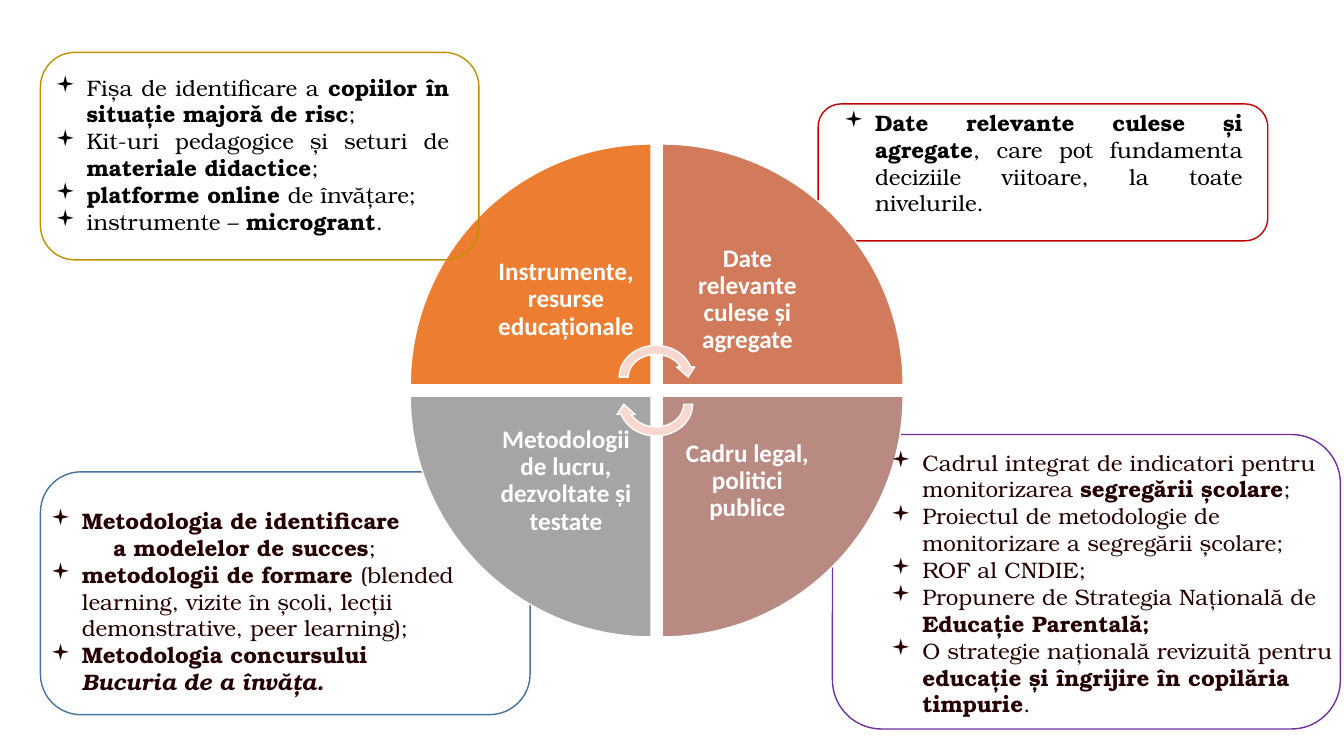
from lxml.etree import SubElement
from pptx import Presentation
from pptx.dml.color import RGBColor
from pptx.enum.shapes import MSO_SHAPE
from pptx.enum.text import MSO_ANCHOR, MSO_AUTO_SIZE, PP_ALIGN
from pptx.oxml.ns import qn
from pptx.util import Cm, Pt

WHITE = RGBColor(0xFF, 0xFF, 0xFF)
BLACK = RGBColor(0x00, 0x00, 0x00)
DARK_BROWN = RGBColor(0x26, 0x00, 0x00)
RED = RGBColor(0xC0, 0x00, 0x00)
PURPLE = RGBColor(0x70, 0x30, 0xA0)
BLUE = RGBColor(0x43, 0x73, 0x9E)
GOLD = RGBColor(0xBF, 0x90, 0x00)
ORANGE = RGBColor(0xED, 0x7D, 0x31)
TERRACOTTA = RGBColor(0xD1, 0x7B, 0x5C)
ROSE = RGBColor(0xB9, 0x8A, 0x82)
GREY = RGBColor(0xA5, 0xA5, 0xA5)
PALE_PINK = RGBColor(0xF8, 0xD7, 0xCE)

LIST_FONT = "TeX Gyre Bonum"
LIST_INDENT = Cm(0.79)

# Wheel geometry in centimetres
WHEEL_LEFT, WHEEL_TOP = 10.34, 3.63
WEDGE_SIZE, WEDGE_STEP = 6.07, 6.35
LABEL_SIZE = 4.29

# Wedges: column, row, rotation, colour, label
WEDGES = [
    (0, 0, 0, ORANGE, "Instrumente, resurse educaționale"),
    (1, 0, 90, TERRACOTTA, "Date relevante culese și agregate"),
    (1, 1, 180, ROSE, "Cadru legal, politici publice"),
    (0, 1, 270, GREY, "Metodologii de lucru, dezvoltate și testate"),
]

# List items are made of (text, style) runs: b bold, i italic; "\n" breaks the line
METHODOLOGIES = [
    [("Metodologia de identificare\n\ta modelelor de succes", "b"), (";", "")],
    [("metodologii de formare ", "b"),
     ("(blended learning, vizite în școli, lecții demonstrative, peer learning);", "")],
    [("Metodologia concursului ", "b"), ("Bucuria de a învăța.", "bi")],
]
LEGAL_FRAMEWORK = [
    [("Cadrul integrat de indicatori pentru monitorizarea ", ""),
     ("segregării școlare", "b"), (";", "")],
    [("Proiectul de metodologie de monitorizare a segregării școlare;", "")],
    [("ROF al CNDIE;", "")],
    [("Propunere de Strategia Națională de ", ""), ("Educație Parentală;", "b")],
    [("O strategie națională revizuită pentru ", ""),
     ("educație și îngrijire în copilăria timpurie", "b"), (".", "")],
]
RELEVANT_DATA = [
    [("Date relevante culese și agregate", "b"),
     (", care pot fundamenta deciziile viitoare, la toate nivelurile.", "")],
]
INSTRUMENTS = [
    [("Fișa de identificare a ", ""), ("copiilor în situație majoră de risc", "b"), (";", "")],
    [("Kit-uri pedagogice și seturi de ", ""), ("materiale didactice", "b"), (";", "")],
    [("platforme online ", "b"), ("de învățare;", "")],
    [("instrumente – ", ""), ("microgrant", "b"), (".", "")],
]


def add_preset(slide, preset, box, fill, line):
    shape = slide.shapes.add_shape(preset, *[Cm(length) for length in box])
    shape.shadow.inherit = False
    if fill is None:
        shape.fill.background()
    else:
        shape.fill.solid()
        shape.fill.fore_color.rgb = fill
    shape.line.color.rgb = line
    shape.line.width = Pt(1)
    return shape


def add_frame(slide, box, color):
    add_preset(slide, MSO_SHAPE.ROUNDED_RECTANGLE, box, None, color)


def add_wedge(slide, column, row, rotation, color, label):
    left = WHEEL_LEFT + column * WEDGE_STEP
    top = WHEEL_TOP + row * WEDGE_STEP
    wedge = add_preset(slide, MSO_SHAPE.PIE_WEDGE,
                       (left, top, WEDGE_SIZE, WEDGE_SIZE), color, WHITE)
    wedge.rotation = rotation

    # The label sits in the corner nearest the hub
    inset = WEDGE_SIZE - LABEL_SIZE
    text_box = slide.shapes.add_textbox(
        Cm(left + (1 - column) * inset), Cm(top + (1 - row) * inset),
        Cm(LABEL_SIZE), Cm(LABEL_SIZE))
    frame = text_box.text_frame
    frame.word_wrap = True
    frame.vertical_anchor = MSO_ANCHOR.MIDDLE
    frame.margin_left = frame.margin_right = Cm(0.36)
    frame.margin_top = frame.margin_bottom = Cm(0.36)
    paragraph = frame.paragraphs[0]
    paragraph.text = label
    paragraph.alignment = PP_ALIGN.CENTER
    paragraph.line_spacing = 0.9
    paragraph.font.name = "Calibri"
    paragraph.font.size = Pt(18)
    paragraph.font.bold = True
    paragraph.font.color.rgb = WHITE


def add_hub_arrow(slide, top, rotation):
    arrow = add_preset(slide, MSO_SHAPE.CIRCULAR_ARROW,
                       (15.49, top, 2.08, 1.83), PALE_PINK, WHITE)
    arrow.rotation = rotation


def add_runs(paragraph, runs):
    for text, style in runs:
        for number, line in enumerate(text.split("\n")):
            if number:
                paragraph.add_line_break()
            run = paragraph.add_run()
            run.text = line
            run.font.bold = "b" in style
            run.font.italic = "i" in style


def format_bullet(paragraph):
    properties = paragraph._p.get_or_add_pPr()
    properties.set("marL", str(LIST_INDENT))
    properties.set("indent", str(-LIST_INDENT))
    SubElement(properties, qn("a:buFont"), typeface="Wingdings")
    SubElement(properties, qn("a:buChar"), char="▪")
    tabs = SubElement(properties, qn("a:tabLst"))
    SubElement(tabs, qn("a:tab"), pos=str(2 * LIST_INDENT), algn="l")


def fill_list(slide, index, box, items, color, alignment):
    placeholder = slide.placeholders[index]
    placeholder.left, placeholder.top, placeholder.width, placeholder.height = [
        Cm(length) for length in box]
    # Bring the list in front of the wheel
    placeholder.element.getparent().append(placeholder.element)
    frame = placeholder.text_frame
    frame.word_wrap = True
    frame.auto_size = MSO_AUTO_SIZE.NONE
    frame.vertical_anchor = MSO_ANCHOR.TOP
    for number, runs in enumerate(items):
        paragraph = frame.add_paragraph() if number else frame.paragraphs[0]
        paragraph.alignment = alignment
        paragraph.line_spacing = 1.0
        paragraph.space_before = Pt(0)
        format_bullet(paragraph)
        paragraph.font.name = LIST_FONT
        paragraph.font.size = Pt(16)
        paragraph.font.color.rgb = color
        add_runs(paragraph, runs)


def main():
    presentation = Presentation()
    presentation.slide_width = Cm(33.87)
    presentation.slide_height = Cm(19.05)
    # The comparison layout offers four body placeholders
    slide = presentation.slides.add_slide(presentation.slide_layouts[4])
    title = slide.shapes.title.element
    title.getparent().remove(title)

    # Frames behind the wheel
    add_frame(slide, (20.62, 2.62, 11.33, 3.45), RED)
    add_frame(slide, (20.98, 10.95, 12.8, 7.42), PURPLE)
    add_frame(slide, (1.02, 11.89, 12.34, 6.12), BLUE)

    # Wheel with its hub arrows
    for wedge in WEDGES:
        add_wedge(slide, *wedge)
    add_hub_arrow(slide, 8.59, 0)
    add_hub_arrow(slide, 9.27, 180)

    # Frame in front of the wheel
    add_frame(slide, (1.02, 1.32, 11.05, 5.23), GOLD)

    # Lists
    fill_list(slide, 1, (1.02, 12.65, 10.8, 5.05), METHODOLOGIES, DARK_BROWN, PP_ALIGN.LEFT)
    fill_list(slide, 2, (22.2, 11.18, 11.67, 7.09), LEGAL_FRAMEWORK, DARK_BROWN, PP_ALIGN.LEFT)
    fill_list(slide, 3, (21.01, 2.62, 10.57, 3), RELEVANT_DATA, BLACK, PP_ALIGN.JUSTIFY)
    fill_list(slide, 4, (1.14, 1.73, 10.44, 4.37), INSTRUMENTS, BLACK, PP_ALIGN.JUSTIFY)

    presentation.save("out.pptx")


if __name__ == "__main__":
    main()
